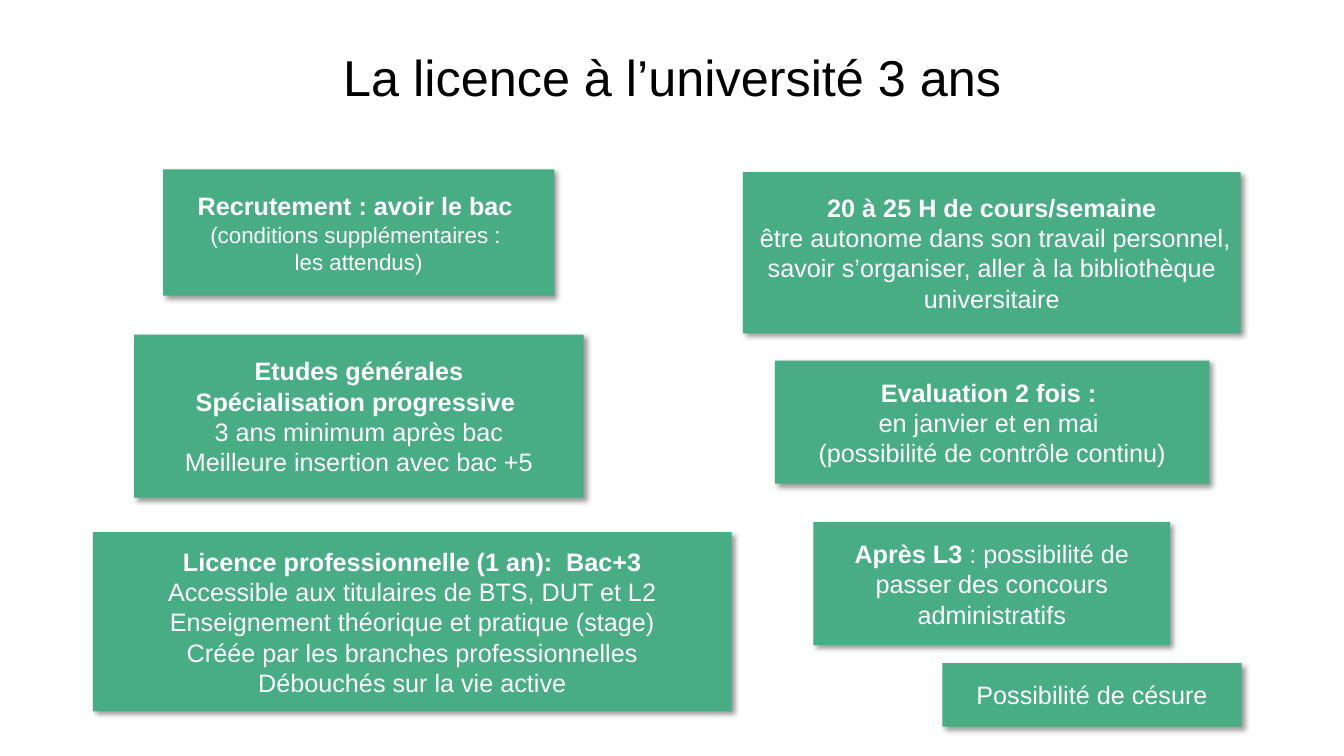
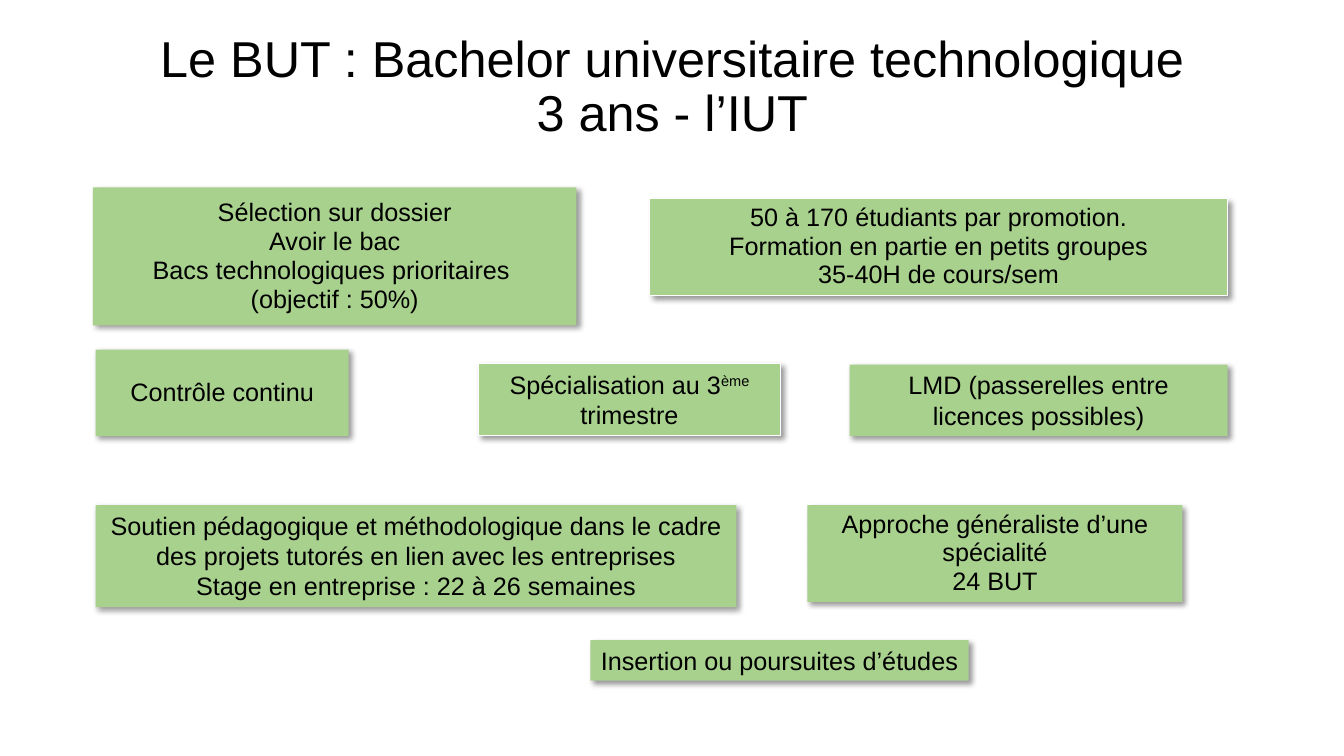
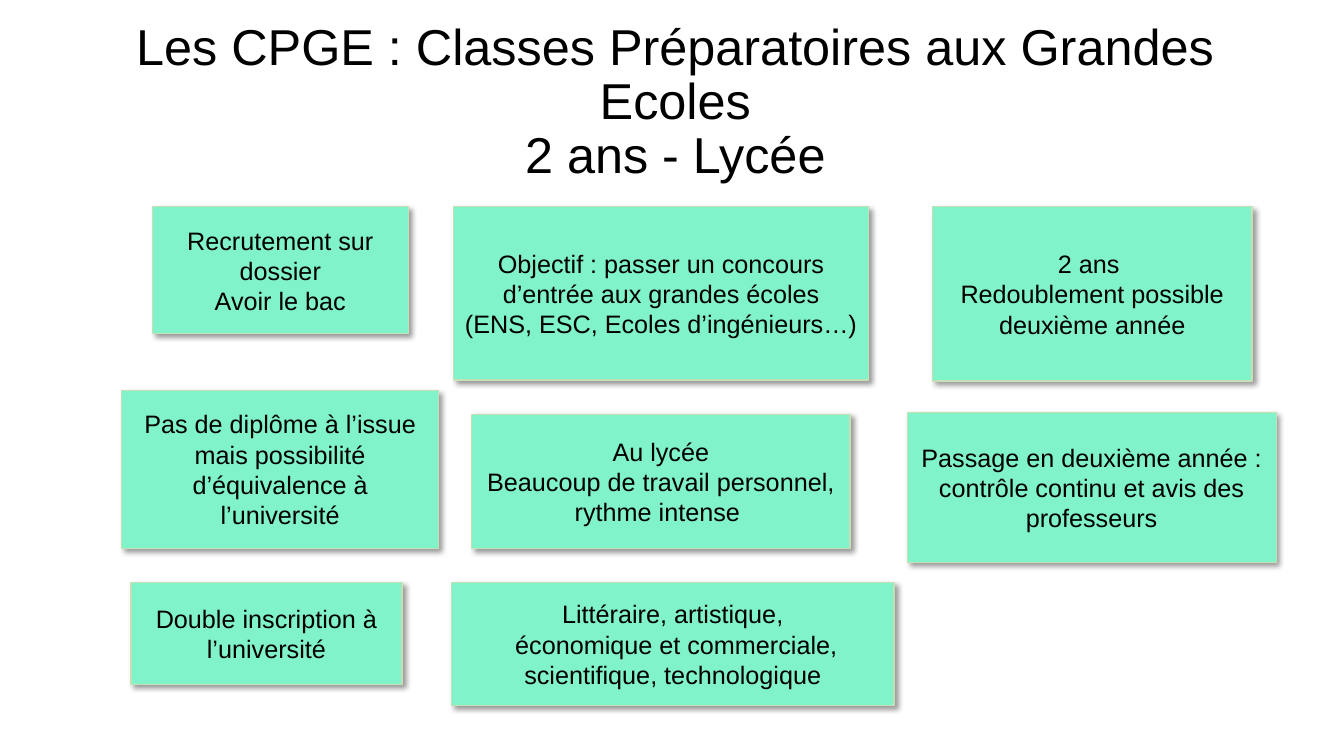
from lxml import etree
from pptx import Presentation
from pptx import util as u
from pptx.dml.color import RGBColor
from pptx.enum import shapes, text
from pptx.oxml import ns

FONT = "Arial"
BLACK = RGBColor(0x00, 0x00, 0x00)
WHITE = RGBColor(0xFF, 0xFF, 0xFF)
GREEN = RGBColor(0x48, 0xAC, 0x84)
LEAF = RGBColor(0xA9, 0xD1, 0x8E)
MINT = RGBColor(0x81, 0xF3, 0xCA)
PALE = RGBColor(0xC5, 0xE0, 0xB4)

TITLE_SIZE = 36
BODY_SIZE = 18
TIGHT = 0.95


def add_run(paragraph, words, size=BODY_SIZE, bold=False, color=BLACK, baseline=0):
    run = paragraph.add_run()
    run.text = words
    font = run.font
    font.name = FONT
    font.size = u.Pt(size)
    font.bold = bold
    font.color.rgb = color
    if baseline:
        font._element.set("baseline", str(baseline * 1000))


def run(words, **form):
    return words, form


def bold(words):
    return run(words, bold=True)


def place(area):
    return [u.Cm(length) for length in area]


def add_shadow(shape):
    shape.shadow.inherit = False
    effects = shape._element.spPr.find(ns.qn("a:effectLst"))
    shadow = etree.SubElement(
        effects, ns.qn("a:outerShdw"), blurRad=str(u.Pt(4)), dist=str(u.Pt(3)),
        dir=str(45 * 60000), algn="tl", rotWithShape="0")
    color = etree.SubElement(shadow, ns.qn("a:srgbClr"), val=str(BLACK))
    etree.SubElement(color, ns.qn("a:alpha"), val="40000")


def add_title(slide, area, *lines):
    frame = slide.shapes.add_textbox(*place(area)).text_frame
    frame.word_wrap = True
    frame.auto_size = text.MSO_AUTO_SIZE.NONE
    frame.vertical_anchor = text.MSO_ANCHOR.MIDDLE
    paragraph = frame.paragraphs[0]
    paragraph.alignment = text.PP_ALIGN.CENTER
    paragraph.line_spacing = 0.9
    for index, line in enumerate(lines):
        if index:
            paragraph.add_line_break()
        add_run(paragraph, line, size=TITLE_SIZE)


def add_card(slide, area, paragraphs, fill, color=BLACK, line=None, line_width=1,
             spacing=1, fitted=False, wrap=True):
    shape = slide.shapes.add_shape(shapes.MSO_SHAPE.RECTANGLE, *place(area))
    shape.fill.solid()
    shape.fill.fore_color.rgb = fill
    if line is None:
        shape.line.fill.background()
    else:
        shape.line.color.rgb = line
        shape.line.width = u.Pt(line_width)
    add_shadow(shape)

    frame = shape.text_frame
    frame.word_wrap = wrap
    frame.vertical_anchor = text.MSO_ANCHOR.TOP if fitted else text.MSO_ANCHOR.MIDDLE
    frame.auto_size = (text.MSO_AUTO_SIZE.SHAPE_TO_FIT_TEXT if fitted
                       else text.MSO_AUTO_SIZE.NONE)
    for index, runs in enumerate(paragraphs):
        paragraph = frame.add_paragraph() if index else frame.paragraphs[0]
        paragraph.alignment = text.PP_ALIGN.CENTER
        paragraph.line_spacing = spacing
        for words, form in [run(runs)] if isinstance(runs, str) else runs:
            add_run(paragraph, words, color=color, **form)


def add_topic(presentation, title_area, title_lines, cards, **style):
    slide = presentation.slides.add_slide(presentation.slide_layouts[6])
    add_title(slide, title_area, *title_lines)
    for area, paragraphs, changes in cards:
        add_card(slide, area, paragraphs, **{**style, **changes})


def card(area, *paragraphs, **changes):
    return area, paragraphs, changes


def add_licence(presentation):
    add_topic(presentation, (2.34, 0.91, 29.21, 2.21), ["La licence à l’université 3 ans"], [
        card((3.38, 8.43, 11.33, 4.11),
             [bold("Etudes générales")], [bold("Spécialisation progressive ")],
             "3 ans minimum après bac", "Meilleure insertion avec bac +5"),
        card((18.72, 4.34, 12.55, 4.06),
             [bold("20 à 25 H de cours/semaine")],
             " être autonome dans son travail personnel, savoir s’organiser, "
             "aller à la bibliothèque universitaire"),
        card((4.11, 4.27, 9.86, 3.18),
             [bold("Recrutement : avoir le bac ")],
             [run("(conditions supplémentaires : ", size=16)],
             [run("les attendus)", size=16)]),
        card((20.5, 13.16, 8.99, 3.1),
             [bold("Après L3 "), run(": possibilité de passer des concours administratifs")]),
        card((19.53, 9.09, 10.95, 3.1),
             [bold("Evaluation 2 fois : ")], "en janvier et en mai ",
             "(possibilité de contrôle continu)"),
        card((2.34, 13.41, 16.1, 4.52),
             [bold("Licence professionnelle (1 an):  Bac+3")],
             "Accessible aux titulaires de BTS, DUT et L2",
             "Enseignement théorique et pratique (stage)",
             "Créée par les branches professionnelles",
             "Débouchés sur la vie active"),
        card((23.75, 16.71, 7.54, 1.6), "Possibilité de césure"),
    ], fill=GREEN, color=WHITE)


def add_but(presentation):
    outline = dict(line=WHITE, line_width=0.75)
    add_topic(presentation, (2.34, 0.38, 29.21, 3.68), [
        "Le BUT : Bachelor universitaire technologique", "3 ans - l’IUT"], [
        card((2.41, 8.81, 6.38, 2.18), "Contrôle continu",
             spacing=TIGHT, fitted=False, wrap=False),
        card((2.41, 12.73, 16.15, 2.57),
             "Soutien pédagogique et méthodologique dans le cadre des projets tutorés "
             "en lien avec les entreprises",
             "Stage en entreprise : 22 à 26 semaines"),
        card((2.34, 4.72, 12.19, 3.48),
             "Sélection sur dossier", "Avoir le bac",
             "Bacs technologiques prioritaires ", "(objectif : 50%)",
             spacing=TIGHT, fitted=False),
        card((16.38, 5, 14.55, 2.44),
             "50 à 170 étudiants par promotion.",
             "Formation en partie en petits groupes", "35-40H de cours/sem",
             spacing=TIGHT, **outline),
        card((12.07, 9.17, 7.59, 1.8),
             [run("Spécialisation au 3"), run("ème", baseline=30), run(" trimestre")],
             **outline),
        card((21.41, 9.19, 9.53, 1.8), "LMD (passerelles entre licences possibles)"),
        card((14.88, 16.13, 9.53, 1.02), "Insertion ou poursuites d’études"),
        card((20.35, 12.73, 9.45, 2.44),
             "Approche généraliste d’une spécialité", "24 BUT", spacing=TIGHT),
    ], fill=LEAF, fitted=True)


def add_cpge(presentation):
    add_topic(presentation, (1.88, 0.76, 30.28, 3.68), [
        "Les CPGE : Classes Préparatoires aux Grandes Ecoles", "2 ans - Lycée"], [
        card((3.84, 5.21, 6.45, 3.2), "Recrutement sur dossier", "Avoir le bac"),
        card((11.43, 5.21, 10.46, 4.37),
             "Objectif : passer un concours d’entrée aux grandes écoles",
             "(ENS, ESC, Ecoles d’ingénieurs…)"),
        card((3.07, 9.83, 7.98, 3.99),
             "Pas de diplôme à l’issue mais possibilité d’équivalence à l’université",
             line_width=0.5),
        card((11.89, 10.44, 9.53, 3.38),
             "Au lycée", "Beaucoup de travail personnel, rythme intense "),
        card((23.5, 5.21, 8.05, 4.39), "2 ans ", "Redoublement possible deuxième année"),
        card((22.86, 10.39, 9.3, 3.78),
             "Passage en deuxième année : contrôle continu et avis des professeurs",
             line_width=0.5),
        card((3.3, 14.68, 6.83, 2.57), "Double inscription à l’université"),
        card((11.38, 14.68, 11.15, 3.1),
             "Littéraire, artistique,", " économique et commerciale,",
             "scientifique, technologique"),
    ], fill=MINT, line=PALE)


def main():
    presentation = Presentation()
    presentation.slide_width = u.Cm(33.87)
    presentation.slide_height = u.Cm(19.05)
    add_licence(presentation)
    add_but(presentation)
    add_cpge(presentation)
    presentation.save("out.pptx")


if __name__ == "__main__":
    main()
